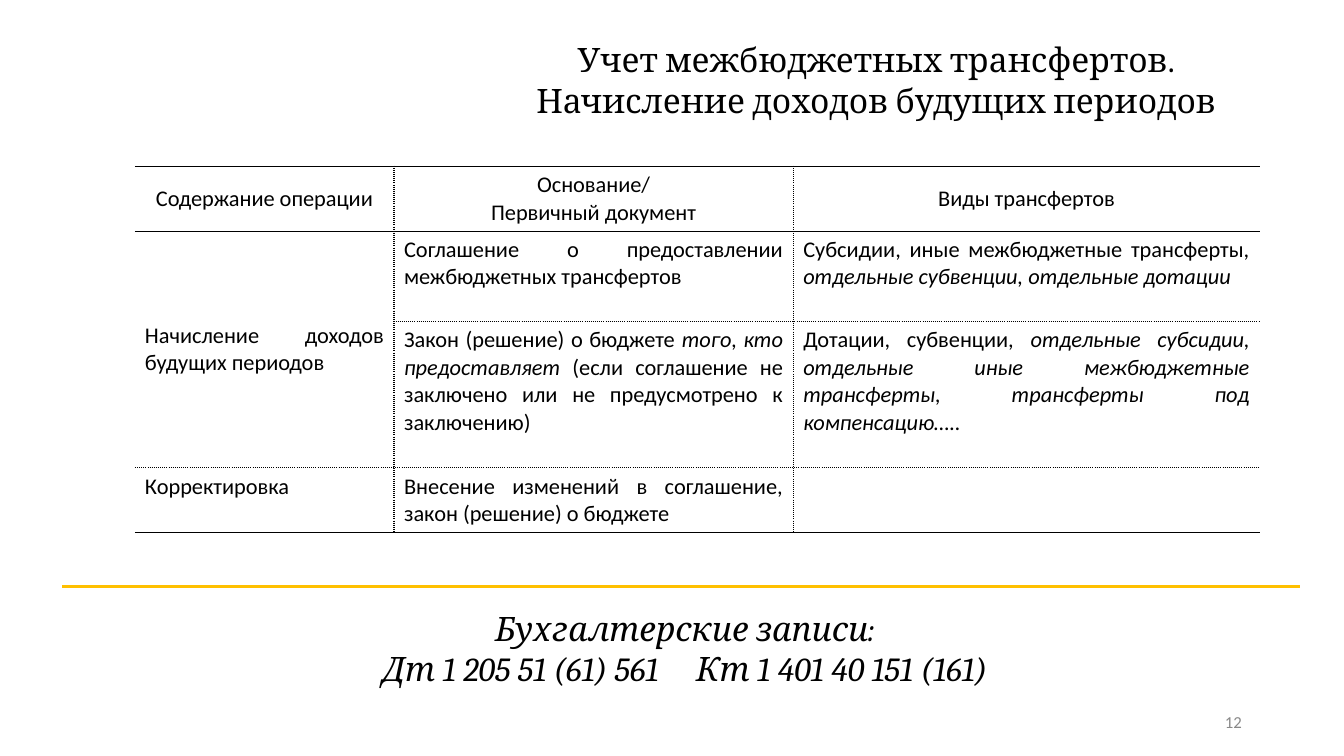
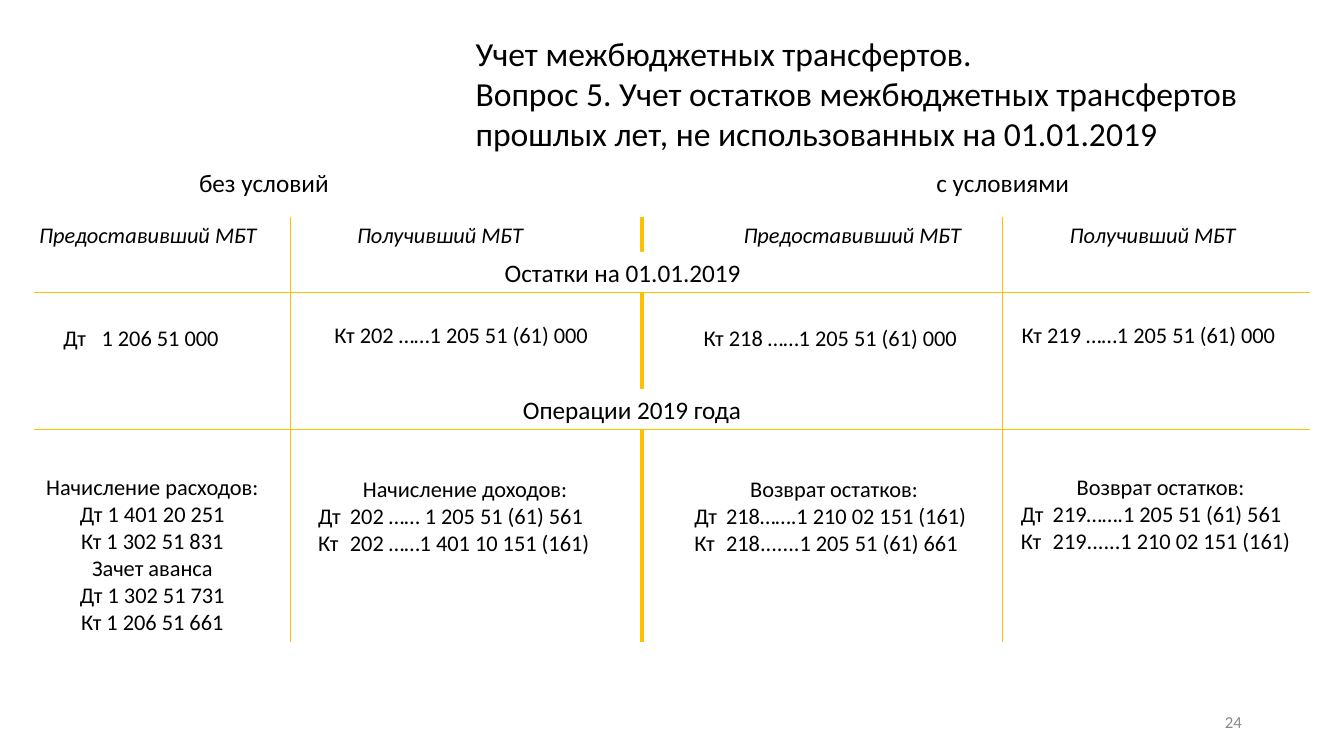
"""Build two slides on the accounting of interbudgetary transfers."""
from dataclasses import dataclass
from typing import Optional

import lxml.etree
import pptx
import pptx.dml.color
import pptx.enum.shapes
import pptx.enum.text
import pptx.oxml.ns
import pptx.util

Cm = pptx.util.Cm
Pt = pptx.util.Pt
qn = pptx.oxml.ns.qn
ALIGN = pptx.enum.text.PP_ALIGN
ANCHOR = pptx.enum.text.MSO_ANCHOR
LEFT, CENTER, RIGHT, JUSTIFY = ALIGN.LEFT, ALIGN.CENTER, ALIGN.RIGHT, ALIGN.JUSTIFY

COLORS = {"text": "000000", "number": "898989", "accent": "FFC000", "band": "FFFFFF"}
BODY_FONT, SERIF_FONT = "Calibri", "Cambria"
TITLE_ONLY = 5


@dataclass
class Note:
    lines: list[str]
    left: float
    top: float
    width: float
    size: float = 16
    first: ALIGN = LEFT
    rest: ALIGN = LEFT
    italic: bool = False
    font: str = BODY_FONT
    color: str = "text"
    fill: Optional[str] = None
    tab: float = 0.8


@dataclass
class Rule:
    x1: float
    y1: float
    x2: float
    y2: float
    weight: float = 1


def rgb(name: str) -> pptx.dml.color.RGBColor:
    return pptx.dml.color.RGBColor.from_string(COLORS[name])


def add_tab_stop(para, position: float) -> None:
    tabs = lxml.etree.SubElement(para._p.get_or_add_pPr(), qn("a:tabLst"))
    lxml.etree.SubElement(tabs, qn("a:tab"), pos=str(Cm(position)), algn="l")


def style_paragraph(para, align, size: float, font: str = BODY_FONT,
                    color: str = "text", italic: bool = False) -> None:
    para.alignment = align
    para.space_before = Pt(0)
    para.font.size = Pt(size)
    para.font.name = font
    para.font.bold = False
    para.font.italic = italic
    para.font.color.rgb = rgb(color)


def fill_frame(frame, note: Note) -> None:
    frame.word_wrap = True
    frame.auto_size = pptx.enum.text.MSO_AUTO_SIZE.NONE
    frame.vertical_anchor = ANCHOR.TOP
    for index, line in enumerate(note.lines):
        para = frame.add_paragraph() if index else frame.paragraphs[0]
        para.add_run().text = line
        if "\t" in line:
            add_tab_stop(para, note.tab)
        style_paragraph(para, note.rest if index else note.first, note.size,
                        note.font, note.color, note.italic)


def note_bounds(note: Note) -> tuple:
    height = len(note.lines) * note.size * 0.043 + 0.25
    return Cm(note.left), Cm(note.top), Cm(note.width), Cm(round(height, 2))


def add_note(page, note: Note) -> None:
    box = page.shapes.add_textbox(*note_bounds(note))
    if note.fill:
        box.fill.solid()
        box.fill.fore_color.rgb = rgb(note.fill)
    fill_frame(box.text_frame, note)


def add_rule(page, rule: Rule) -> None:
    line = page.shapes.add_connector(
        pptx.enum.shapes.MSO_CONNECTOR.STRAIGHT,
        Cm(rule.x1), Cm(rule.y1), Cm(rule.x2), Cm(rule.y2))
    line.line.color.rgb = rgb("accent")
    line.line.width = Pt(rule.weight)
    lxml.etree.SubElement(line._element.spPr, qn("a:effectLst"))


def add_page(deck, title: Note, number: int):
    page = deck.slides.add_slide(deck.slide_layouts[TITLE_ONLY])
    box = page.shapes.title
    box.left, box.top, box.width, box.height = note_bounds(title)
    fill_frame(box.text_frame, title)
    add_note(page, Note([str(number)], 23.93, 17.8, 7.62, 12, RIGHT, color="number"))
    return page


def set_borders(cell, styles: dict[str, Optional[str]]) -> None:
    cell.fill.background()
    props = cell._tc.get_or_add_tcPr()
    for index, (side, dash) in enumerate(styles.items()):
        border = lxml.etree.Element(qn(f"a:ln{side}"), w=str(Pt(1)))
        if dash:
            fill = lxml.etree.SubElement(border, qn("a:solidFill"))
            lxml.etree.SubElement(fill, qn("a:srgbClr"), val=COLORS["text"])
            lxml.etree.SubElement(border, qn("a:prstDash"), val=dash)
        else:
            lxml.etree.SubElement(border, qn("a:noFill"))
        props.insert(index, border)


def fill_cell(cell, text: str, align) -> None:
    for index, line in enumerate(text.split("\n")):
        frame = cell.text_frame
        para = frame.add_paragraph() if index else frame.paragraphs[0]
        style_paragraph(para, align, 16)
        for part, piece in enumerate(line.split("|")):
            if piece:
                span = para.add_run()
                span.text = piece
                if part % 2:
                    span.font.italic = True


def add_operations_table(page) -> None:
    widths = [6.53, 10.06, 11.76]
    heights = [1.62, 2.28, 3.68, 1.62]
    rows = [
        ["Содержание операции", "Основание/\nПервичный документ", "Виды трансфертов"],
        ["Начисление доходов будущих периодов",
         "Соглашение о предоставлении межбюджетных трансфертов",
         "Субсидии, иные межбюджетные трансферты, "
         "|отдельные субвенции, отдельные дотации|"],
        ["",
         "Закон (решение) о бюджете |того, кто предоставляет |"
         "(если соглашение не заключено или не предусмотрено к заключению)",
         "Дотации, субвенции, |отдельные субсидии, отдельные иные межбюджетные "
         "трансферты, трансферты под компенсацию…..|"],
        ["Корректировка", "Внесение изменений в соглашение, закон (решение) о бюджете", ""],
    ]
    table = page.shapes.add_table(len(rows), len(widths), Cm(3.4), Cm(4.19),
                                  Cm(sum(widths)), Cm(sum(heights))).table
    table.first_row = table.horz_banding = False
    for column, width in zip(table.columns, widths):
        column.width = Cm(width)
    last_row, last_column = len(rows) - 1, len(widths) - 1
    for r, texts in enumerate(rows):
        table.rows[r].height = Cm(heights[r])
        for c, text in enumerate(texts):
            cell = table.cell(r, c)
            fill_cell(cell, text, JUSTIFY if r else CENTER)
            cell.vertical_anchor = ANCHOR.TOP if r else ANCHOR.MIDDLE
            set_borders(cell, {
                "L": "sysDot" if c else None,
                "R": "sysDot" if c < last_column else None,
                "T": "solid" if r < 2 else "sysDot",
                "B": "solid" if r in (0, last_row) else "sysDot",
            })
    accrual = table.cell(1, 0)
    accrual.merge(table.cell(2, 0))
    accrual.vertical_anchor = ANCHOR.MIDDLE


def build_accrual_page(deck) -> None:
    page = add_page(deck, Note(
        ["Учет межбюджетных трансфертов.", "Начисление доходов будущих периодов"],
        12.34, 0.86, 19.48, 24, CENTER, CENTER, font=SERIF_FONT), 12)
    add_operations_table(page)
    add_rule(page, Rule(1.57, 14.78, 32.77, 14.78, 2.25))
    add_note(page, Note(
        ["Бухгалтерские записи:", "Дт 1 205 51 (61) 561\tКт 1 401 40 151 (161)"],
        2.67, 15.19, 29.18, 24, CENTER, CENTER, True, SERIF_FONT, tab=7.91))


def build_balances_page(deck) -> None:
    page = add_page(deck, Note(
        ["Учет межбюджетных трансфертов.",
         "Вопрос 5. Учет остатков межбюджетных трансфертов "
         "прошлых лет, не использованных на 01.01.2019"],
        11.73, 0.69, 22.1, 24), 24)
    provider, receiver = ["Предоставивший МБТ"], ["Получивший МБТ"]
    notes = [
        Note(["без условий"], 4.58, 4.1, 4.14, 18, CENTER),
        Note(["с условиями"], 23.2, 4.1, 4.14, 18, CENTER),
        Note(provider, 0.74, 5.46, 6.12, italic=True),
        Note(receiver, 7.52, 5.46, 7.14, first=CENTER, italic=True),
        Note(provider, 18.49, 5.46, 6.12, italic=True),
        Note(receiver, 25.48, 5.46, 7.14, first=CENTER, italic=True),
        Note(["Дт\t1 206 51 000"], 1.35, 8.05, 4.9, tab=0.96),
        Note(["Кт 202 ……1 205 51 (61) 000"], 8.18, 7.98, 7.09),
        Note(["Кт 218 ……1 205 51 (61) 000"], 17.48, 8.05, 7.09),
        Note(["Кт 219 ……1 205 51 (61) 000"], 25.5, 7.98, 7.09),
        Note(["Начисление расходов:", "Дт 1 401 20 251", "Кт 1 302 51 831",
              "Зачет аванса", "Дт 1 302 51 731", "Кт 1 206 51 661"],
             0.69, 11.81, 6.3, first=CENTER, rest=CENTER),
        Note(["Начисление доходов:", "Дт\t202 …… 1 205 51 (61) 561",
              "Кт\t202 ……1 401 10 151 (161)"], 7.77, 11.86, 7.9, first=CENTER),
        Note(["Возврат остатков:", "Дт\t218…….1 210 02 151 (161)",
              "Кт\t218.......1 205 51 (61) 661"], 17.25, 11.86, 7.54, first=CENTER),
        Note(["Возврат остатков:", "Дт\t219…….1 205 51 (61) 561",
              "Кт\t219......1 210 02 151 (161)"], 25.48, 11.81, 7.54, first=CENTER),
    ]
    bands = [
        Note(["Остатки на 01.01.2019"], 12.47, 6.35, 7.44, 18, fill="band"),
        Note(["Операции 2019 года"], 12.93, 9.8, 6.86, 18, fill="band"),
    ]
    for note in notes:
        add_note(page, note)
    for x, weight in [(7.32, 1), (25.27, 1), (16.18, 2.5)]:
        add_rule(page, Rule(x, 5.46, x, 16.18, weight))
    for band in bands:
        add_note(page, band)
    for y in (7.37, 10.82):
        add_rule(page, Rule(0.86, y, 33.02, y))


def main() -> None:
    deck = pptx.Presentation()
    deck.slide_width, deck.slide_height = Cm(33.87), Cm(19.05)
    build_accrual_page(deck)
    build_balances_page(deck)
    deck.save("out.pptx")


if __name__ == "__main__":
    main()
